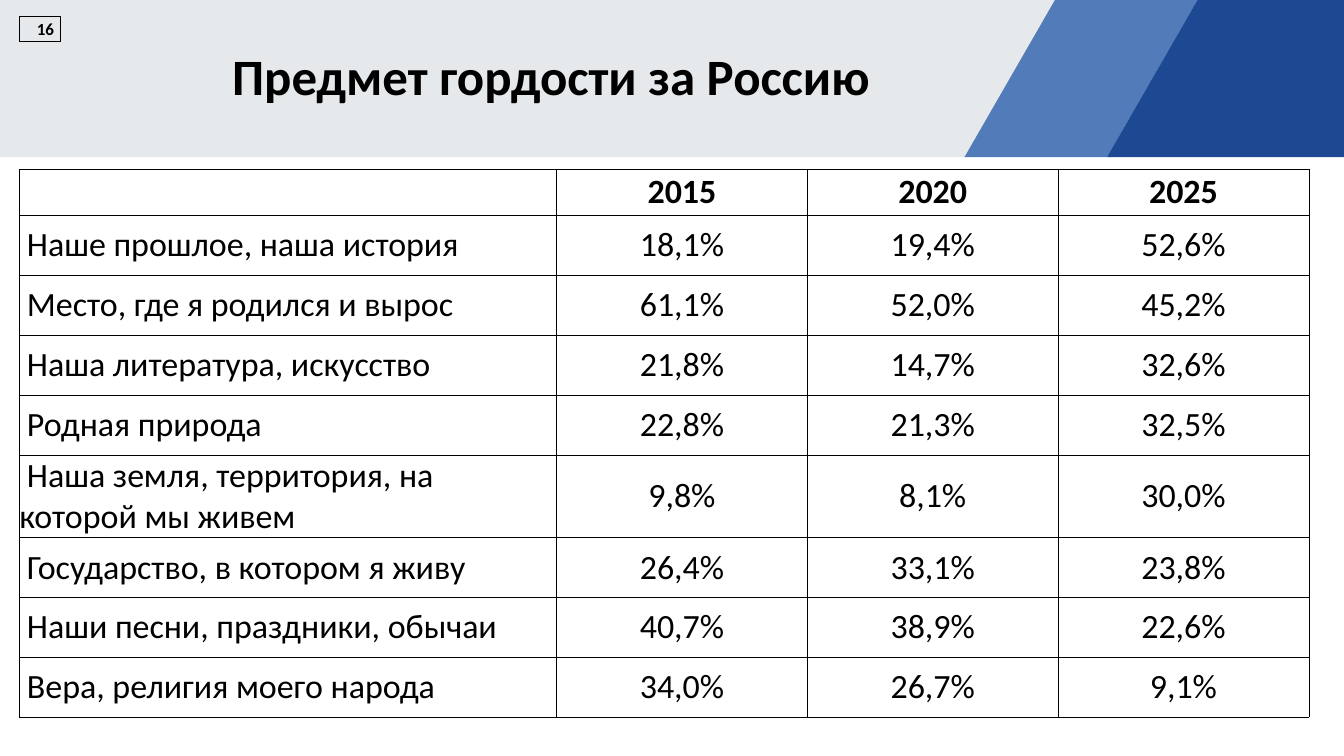
from lxml import etree
from pptx import Presentation
from pptx import util as u
from pptx.dml.color import RGBColor
from pptx.enum import shapes, text
from pptx.oxml import ns

TITLE = "Предмет гордости за Россию"
PAGE = "16"
ROWS = [
    ("", "2015", "2020", "2025"),
    ("Наше прошлое, наша история", "18,1%", "19,4%", "52,6%"),
    ("Место, где я родился и вырос", "61,1%", "52,0%", "45,2%"),
    ("Наша литература, искусство", "21,8%", "14,7%", "32,6%"),
    ("Родная природа", "22,8%", "21,3%", "32,5%"),
    ("Наша земля, территория, на которой мы живем", "9,8%", "8,1%", "30,0%"),
    ("Государство, в котором я живу", "26,4%", "33,1%", "23,8%"),
    ("Наши песни, праздники, обычаи", "40,7%", "38,9%", "22,6%"),
    ("Вера, религия моего народа", "34,0%", "26,7%", "9,1%"),
]
WIDTH, HEIGHT, BAND_H = 55.85, 31.42, 6.53
BANDS = [
    ("E6E9EB", [(0, 0), (43.92, 0), (40.16, BAND_H), (0, BAND_H)]),
    ("517BB9", [(43.84, 0), (49.76, 0), (46, BAND_H), (40.08, BAND_H)]),
    ("1D4992", [(49.76, 0), (WIDTH, 0), (WIDTH, BAND_H), (46, BAND_H)]),
]
LEFT, TABLE_TOP = 0.8, 7.04
COL_W = [22.33, 10.42, 10.42, 10.42]
ROW_H = [1.9] + [2.49] * 8
BLACK = "000000"


def color(value):
    return RGBColor.from_string(value)


def format_text(tf, size, bold, align, indent=0):
    p = tf.paragraphs[0]
    p.alignment = align
    p.space_before = u.Pt(0)
    pPr = p._p.get_or_add_pPr()
    pPr.set("marL", "0")
    pPr.set("indent", str(u.Cm(indent)))
    for r in p.runs:
        r.font.name = "Calibri"
        r.font.size = u.Pt(size)
        r.font.bold = bold
        r.font.color.rgb = color(BLACK)


def add_band(s, fill, points):
    xy = [(u.Cm(x), u.Cm(y)) for x, y in points]
    builder = s.shapes.build_freeform(*xy[0])
    builder.add_line_segments(xy[1:], close=True)
    sp = builder.convert_to_shape()
    sp.shadow.inherit = False
    sp.fill.solid()
    sp.fill.fore_color.rgb = color(fill)
    sp.line.fill.background()


def add_title(s):
    sp = s.shapes.title
    s.shapes._spTree.append(sp._element)
    sp.left, sp.top, sp.width, sp.height = [u.Cm(v) for v in (3.38, 1.73, 37.54, 4.44)]
    tf = sp.text_frame
    tf.text = TITLE
    tf.auto_size = text.MSO_AUTO_SIZE.NONE
    tf.vertical_anchor = text.MSO_ANCHOR.TOP
    format_text(tf, 60, True, text.PP_ALIGN.CENTER, 1.5)


def add_page_number(s):
    sp = s.shapes.add_shape(shapes.MSO_SHAPE.RECTANGLE, u.Cm(LEFT), u.Cm(0.66), u.Cm(1.7), u.Cm(1.07))
    sp.shadow.inherit = False
    sp.fill.background()
    sp.line.color.rgb = color(BLACK)
    sp.line.width = u.Pt(0.75)
    tf = sp.text_frame
    tf.text = PAGE
    tf.vertical_anchor = text.MSO_ANCHOR.MIDDLE
    format_text(tf, 20, True, text.PP_ALIGN.RIGHT)


def add_borders(cell):
    tcPr = cell._tc.get_or_add_tcPr()
    for side in ("lnL", "lnR", "lnT", "lnB"):
        ln = etree.SubElement(tcPr, ns.qn("a:" + side), w=str(u.Pt(0.5)))
        fill = etree.SubElement(ln, ns.qn("a:solidFill"))
        etree.SubElement(fill, ns.qn("a:srgbClr"), val=BLACK)


def add_pride_table(s):
    frame = s.shapes.add_table(len(ROWS), len(COL_W), u.Cm(LEFT), u.Cm(TABLE_TOP),
                               u.Cm(sum(COL_W)), u.Cm(sum(ROW_H)))
    table = frame.table
    table.first_row = table.horz_banding = False
    for col, w in zip(table.columns, COL_W):
        col.width = u.Cm(w)
    for row, h, values in zip(table.rows, ROW_H, ROWS):
        row.height = u.Cm(h)
        for i, (cell, value) in enumerate(zip(row.cells, values)):
            cell.margin_left = cell.margin_right = cell.margin_top = cell.margin_bottom = 0
            cell.vertical_anchor = text.MSO_ANCHOR.MIDDLE
            add_borders(cell)
            cell.fill.background()
            cell.text_frame.text = value
            align = text.PP_ALIGN.CENTER if i else text.PP_ALIGN.LEFT
            format_text(cell.text_frame, 40, values is ROWS[0], align, 0 if i else 0.32)


def main():
    prs = Presentation()
    prs.slide_width, prs.slide_height = u.Cm(WIDTH), u.Cm(HEIGHT)
    s = prs.slides.add_slide(prs.slide_layouts.get_by_name("Title Only"))
    for fill, points in BANDS:
        add_band(s, fill, points)
    add_title(s)
    add_page_number(s)
    add_pride_table(s)
    prs.save("out.pptx")


if __name__ == "__main__":
    main()
